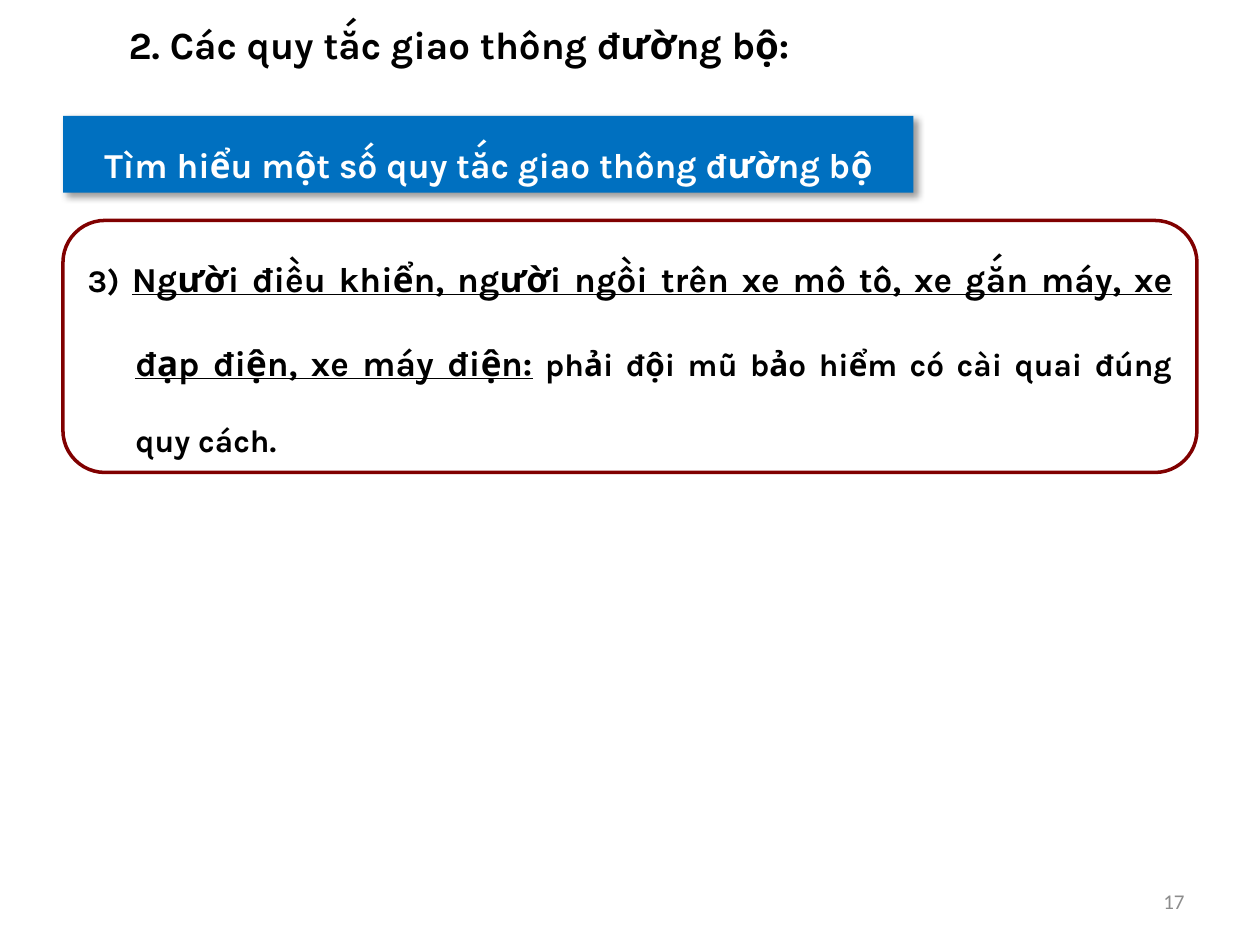
from lxml.etree import SubElement
from pptx import Presentation
from pptx.dml.color import RGBColor
from pptx.enum.shapes import MSO_SHAPE
from pptx.enum.text import MSO_ANCHOR, PP_ALIGN
from pptx.oxml.ns import qn
from pptx.util import Inches, Pt

COLORS = {
    "text": "000000",
    "white": "FFFFFF",
    "banner": "0070C0",
    "border": "800000",
    "number": "8C8C8C",
}


def rgb(name):
    return RGBColor.from_string(COLORS[name])


def style_run(r, size, color="text", font="Karla", bold=True, underline=False):
    r.font.name = font
    r.font.size = Pt(size)
    r.font.bold = bold
    r.font.underline = underline
    r.font.color.rgb = rgb(color)


def place(sp, left, top, width, height):
    sp.left, sp.top = Inches(left), Inches(top)
    sp.width, sp.height = Inches(width), Inches(height)


def add_title(s, text):
    sp = s.shapes.title
    place(sp, 0.92, 0.14, 8.92, 0.42)
    tf = sp.text_frame
    tf.text = text
    tf.vertical_anchor = MSO_ANCHOR.MIDDLE
    p = tf.paragraphs[0]
    p.alignment = PP_ALIGN.LEFT
    style_run(p.runs[0], 22)


def add_shadow(sp):
    effects = SubElement(sp._element.spPr, qn("a:effectLst"))
    shadow = SubElement(effects, qn("a:outerShdw"), blurRad=str(Pt(4)),
                        dist=str(Pt(3)), dir="2700000", algn="tl", rotWithShape="0")
    color = SubElement(shadow, qn("a:srgbClr"), val=COLORS["text"])
    SubElement(color, qn("a:alpha"), val="40000")


def add_banner(s, text):
    sp = s.shapes.add_shape(MSO_SHAPE.RECTANGLE, Inches(0.5), Inches(0.92),
                            Inches(6.75), Inches(0.61))
    sp.fill.solid()
    sp.fill.fore_color.rgb = rgb("banner")
    sp.line.fill.background()
    add_shadow(sp)
    tf = sp.text_frame
    tf.text = text
    tf.vertical_anchor = MSO_ANCHOR.TOP
    p = tf.paragraphs[0]
    p.alignment = PP_ALIGN.CENTER
    p.line_spacing = 1.5
    style_run(p.runs[0], 20, "white")


def add_rule_box(s, parts):
    sp = s.shapes.add_shape(MSO_SHAPE.ROUNDED_RECTANGLE, Inches(0.5), Inches(1.75),
                            Inches(9), Inches(2))
    sp.shadow.inherit = False
    sp.fill.background()
    sp.line.color.rgb = rgb("border")
    sp.line.width = Pt(2)
    tf = sp.text_frame
    tf.vertical_anchor = MSO_ANCHOR.MIDDLE
    tf.margin_top, tf.margin_bottom = 0, Inches(0.15)
    p = tf.paragraphs[0]
    p.alignment = PP_ALIGN.JUSTIFY
    p.line_spacing = 2.0
    pPr = p._p.get_or_add_pPr()
    pPr.set("marL", str(Inches(0.38)))
    pPr.set("indent", str(Inches(-0.38)))
    for text, size, underline in parts:
        r = p.add_run()
        r.text = text
        style_run(r, size, underline=underline)


def add_slide_number(s, text):
    sp = s.shapes.add_textbox(Inches(7.17), Inches(6.95), Inches(2.33), Inches(0.4))
    tf = sp.text_frame
    tf.word_wrap = True
    tf.vertical_anchor = MSO_ANCHOR.MIDDLE
    tf.text = text
    p = tf.paragraphs[0]
    p.alignment = PP_ALIGN.RIGHT
    style_run(p.runs[0], 12, "number", "Calibri", False)


def main():
    prs = Presentation()
    prs.slide_width, prs.slide_height = Inches(10), Inches(7.5)
    s = prs.slides.add_slide(prs.slide_layouts[5])
    add_title(s, "2. Các quy tắc giao thông đường bộ:")
    add_banner(s, "Tìm hiểu một số quy tắc giao thông đường bộ")
    add_rule_box(s, [
        ("3) ", 18, False),
        ("Người điều khiển, người ngồi trên xe mô tô, xe gắn máy, "
         "xe đạp điện, xe máy điện:", 20, True),
        (" phải đội mũ bảo hiểm có cài quai đúng quy cách.", 18, False),
    ])
    add_slide_number(s, "17")
    prs.save("out.pptx")


if __name__ == "__main__":
    main()
